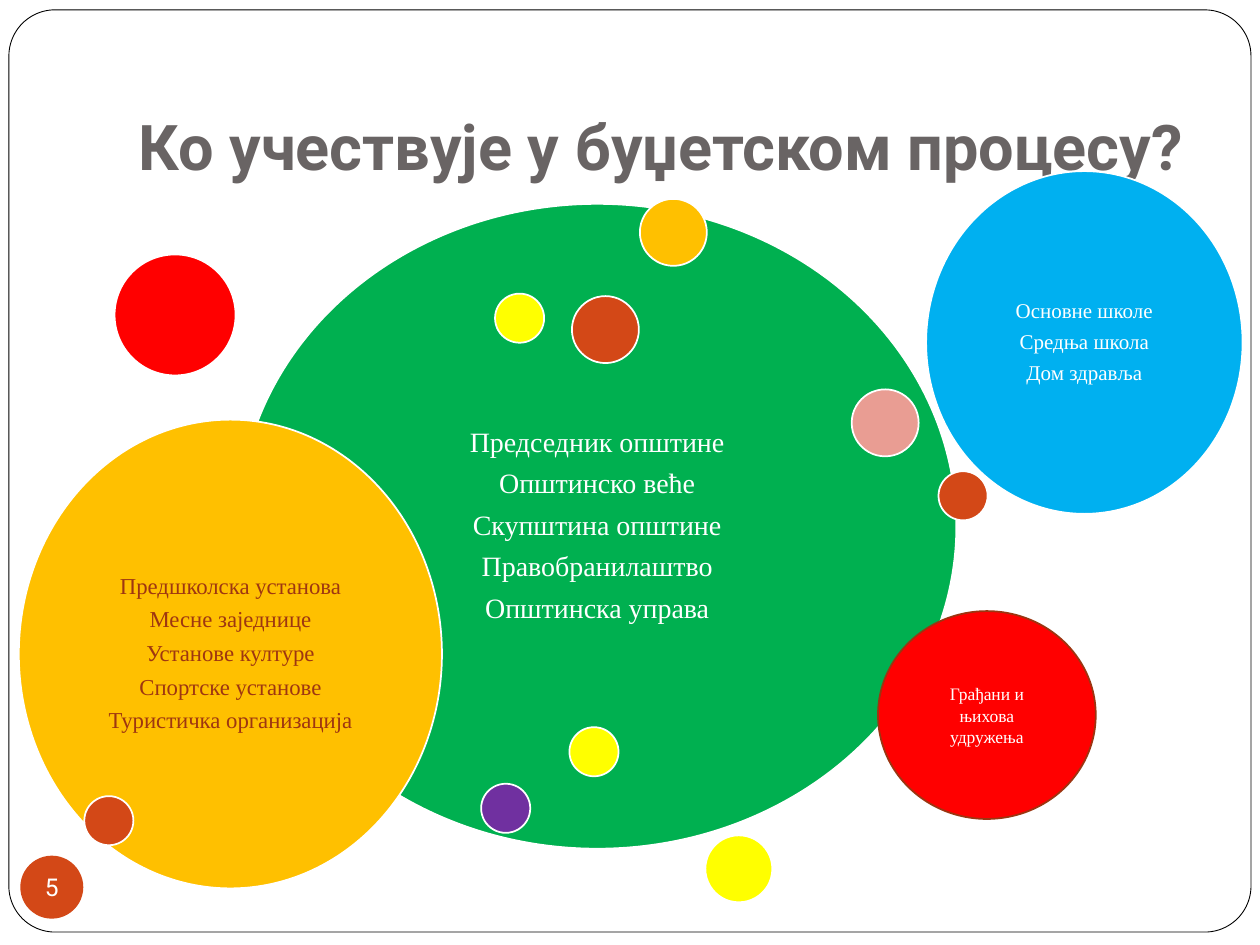
from pptx import Presentation
from pptx.dml.color import RGBColor
from pptx.enum.shapes import MSO_SHAPE
from pptx.enum.text import MSO_ANCHOR, PP_ALIGN
from pptx.util import Cm, Pt

OVAL = MSO_SHAPE.OVAL
ROUND = MSO_SHAPE.ROUNDED_RECTANGLE
MIDDLE, BOTTOM = MSO_ANCHOR.MIDDLE, MSO_ANCHOR.BOTTOM
LEFT, CENTER = PP_ALIGN.LEFT, PP_ALIGN.CENTER

WHITE = RGBColor(0xFF, 0xFF, 0xFF)
BLACK = RGBColor(0x00, 0x00, 0x00)
GRAY = RGBColor(0x69, 0x64, 0x64)
GREEN = RGBColor(0x00, 0xB0, 0x50)
GOLD = RGBColor(0xFF, 0xC0, 0x00)
VIOLET = RGBColor(0x70, 0x30, 0xA0)
RUST = RGBColor(0xD3, 0x48, 0x17)
YELLOW = RGBColor(0xFF, 0xFF, 0x00)
RED = RGBColor(0xFF, 0x00, 0x00)
BLUE = RGBColor(0x00, 0xB0, 0xF0)
PINK = RGBColor(0xE9, 0x9D, 0x93)
BROWN = RGBColor(0x9E, 0x36, 0x11)
EDGE = RGBColor(0x9C, 0x35, 0x11)

SANS, SERIF = "Roboto", "Times New Roman"
SMALL, MID, LARGE = 0.99, 1.35, 2.44

TITLE = "Ко учествује у буџетском процесу?"
NUMBER = "5"
COUNCIL = ["Председник општине", "Општинско веће", "Скупштина општине",
           "Правобранилаштво", "Општинска управа"]
LOCAL = ["Предшколска установа", "Месне заједнице", "Установе културе",
         "Спортске установе", "Туристичка организација"]
PUBLIC = ["Основне школе", "Средња школа", "Дом здравља"]
PEOPLE = ["Грађани и њихова удружења"]

# left, top, width, height, fill, lines, size, ink
CIRCLES = [
    (4.8, 4.11, 14.48, 13, GREEN, COUNCIL, 16, WHITE),
    (12.9, 4.01, MID, MID, GOLD),
    (9.7, 15.8, SMALL, SMALL, VIOLET),
    (18.92, 9.5, SMALL, SMALL, RUST),
    (14.22, 16.84, MID, MID, YELLOW),
    (9.98, 5.92, SMALL, SMALL, YELLOW),
    (0.38, 8.46, 8.53, 9.45, GOLD, LOCAL, 13, BROWN),
    (11.53, 5.97, MID, MID, RUST),
    (2.31, 5.13, LARGE, LARGE, RED),
    (18.67, 3.45, 6.38, 6.91, BLUE, PUBLIC, 12, WHITE),
    (17.17, 7.85, MID, MID, PINK),
    (1.7, 16.05, SMALL, SMALL, RUST),
    (11.48, 14.66, SMALL, SMALL, YELLOW),
]


def draw(slide, kind, box, fill, line=None, width=1):
    shape = slide.shapes.add_shape(kind, *map(Cm, box))
    shape.shadow.inherit = False
    shape.fill.solid()
    shape.fill.fore_color.rgb = fill
    if line is None:
        shape.line.fill.background()
    else:
        shape.line.color.rgb = line
        shape.line.width = Pt(width)
    return shape


def write(shape, lines, size, ink, face=SERIF, align=CENTER, anchor=MIDDLE,
          pad=(0.13, 0.13, 0.13, 0.13), bold=False, loose=False):
    frame = shape.text_frame
    frame.word_wrap = True
    frame.vertical_anchor = anchor
    (frame.margin_left, frame.margin_top,
     frame.margin_right, frame.margin_bottom) = map(Cm, pad)
    frame.text = "\n".join(lines)
    for para in frame.paragraphs:
        para.alignment = align
        para.font.name = face
        para.font.size = Pt(size)
        para.font.bold = bold
        para.font.color.rgb = ink
        if loose:
            para.line_spacing = 0.9
            para.space_after = Pt(round(size * 0.4, 1))


def main():
    deck = Presentation()
    deck.slide_width, deck.slide_height = Cm(25.4), Cm(19.05)
    slide = deck.slides.add_slide(deck.slide_layouts[6])

    frame = draw(slide, ROUND, (0.18, 0.2, 25.04, 18.59), WHITE, BLACK, 0.5)
    frame.adjustments[0] = 0.05

    title = slide.shapes.add_textbox(Cm(2.54), Cm(0.76), Cm(21.59), Cm(3.18))
    write(title, [TITLE], 36, GRAY, SANS, LEFT, BOTTOM,
          (0.25, 0.13, 0, 0.25), bold=True)

    badge = draw(slide, OVAL, (0.41, 17.25, 1.27, 1.27), RUST)
    write(badge, [NUMBER], 14, WHITE, SANS, pad=(0, 0, 0, 0))

    for *box, fill in (row[:5] for row in CIRCLES if len(row) == 0):
        draw(slide, OVAL, box, fill, WHITE)
    for left, top, wide, high, fill, *words in CIRCLES:
        circle = draw(slide, OVAL, (left, top, wide, high), fill, WHITE)
        if words:
            write(circle, *words, loose=True)

    group = draw(slide, OVAL, (17.7, 12.32, 4.39, 4.19), RED, EDGE)
    write(group, PEOPLE, 10, WHITE, pad=(0.25, 0.13, 0.25, 0.13))

    deck.save("out.pptx")


if __name__ == "__main__":
    main()
